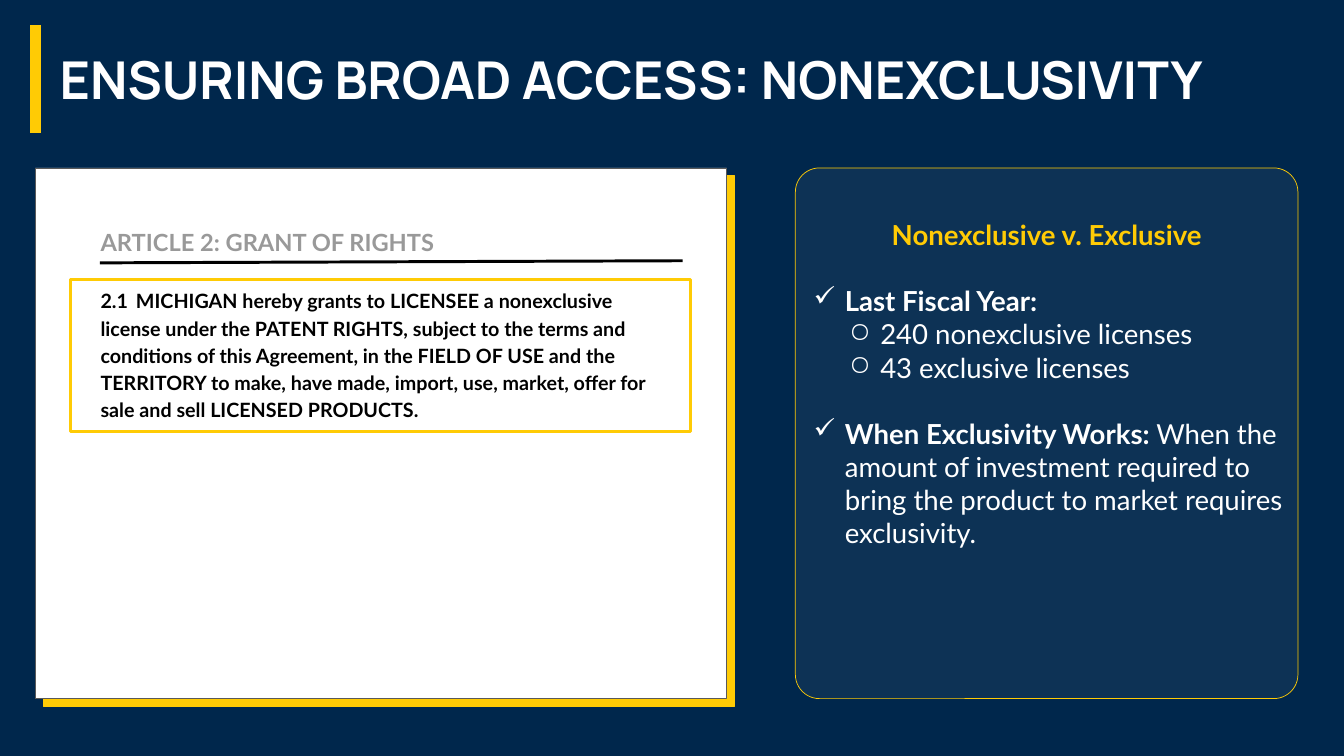
from pptx import Presentation
from pptx.util import Inches, Pt
from pptx.dml.color import RGBColor as RGB
from pptx.enum.shapes import MSO_SHAPE as SHAPE, MSO_CONNECTOR as LINE
from pptx.enum.text import PP_ALIGN as ALIGN, MSO_ANCHOR as ANCHOR
from pptx.oxml.ns import qn
from lxml.etree import SubElement as sub

NAVY, GOLD, WHITE, BLACK = "00274C", "FFCB05", "FFFFFF", "000000"
GREY, EDGE = "999999", "595959"

HEAD = dict(name="Manrope", size=Pt(53), bold=True, color=WHITE)
TERM = dict(name="Lato", size=Pt(28), bold=True, color=GOLD)
BOLD = TERM | dict(color=WHITE)
BODY = BOLD | dict(bold=False)
ARTICLE = TERM | dict(size=Pt(24), color=GREY)
CLAUSE = TERM | dict(size=Pt(20), color=BLACK)

CENTER = dict(alignment=ALIGN.CENTER)
LOOSE = dict(line_spacing=1.15)
GAP = dict(space_before=Pt(33.6))
CHECK, RING = ("✓", 0.5), ("○", 1)

title = [([("ENSURING BROAD ACCESS: NONEXCLUSIVITY", HEAD)], {}, None)]
terms = [
    ([("Nonexclusive v. Exclusive", TERM)], CENTER, None),
    ([("Last Fiscal Year:", BOLD)], GAP, CHECK),
    ([("240 nonexclusive licenses", BODY)], dict(level=1), RING),
    ([("43 exclusive licenses", BODY)], dict(level=1), RING),
    ([("When Exclusivity Works:", BOLD),
      (" When the amount of investment required to bring the product "
       "to market requires exclusivity.", BODY)], GAP, CHECK),
]
grant = [
    ([("ARTICLE 2: GRANT OF RIGHTS", ARTICLE)], LOOSE, None),
    ([("2.1\tMICHIGAN hereby grants to LICENSEE a nonexclusive license under "
       "the PATENT RIGHTS, subject to the terms and conditions of this "
       "Agreement, in the FIELD OF USE and the TERRITORY to make, have made, "
       "import, use, market, offer for sale and sell LICENSED PRODUCTS.",
       CLAUSE)], LOOSE | dict(space_before=Pt(30.4)), None),
]

TOP, TALL = 2.37, 7.49

deck = Presentation()
deck.slide_width, deck.slide_height = Inches(18.96), Inches(10.67)
slide = deck.slides.add_slide(deck.slide_layouts[6])
shapes = slide.shapes


def paint(fill, color):
    fill.solid()
    fill.fore_color.rgb = RGB.from_string(color)


def mark(para, sign, left):
    props = para._p.get_or_add_pPr()
    props.set("marL", str(Inches(left)))
    props.set("indent", str(Inches(-0.44)))
    tint = sub(props, qn("a:buClr"))
    sub(tint, qn("a:srgbClr"), val=WHITE)
    sub(props, qn("a:buChar"), char=sign)


def write(frame, paras, side, top):
    values = dict(word_wrap=True, vertical_anchor=ANCHOR.TOP,
                  margin_left=Inches(side), margin_right=Inches(side),
                  margin_top=Inches(top), margin_bottom=Inches(side))
    for key, value in values.items():
        setattr(frame, key, value)
    for i, (runs, form, bullet) in enumerate(paras):
        para = frame.add_paragraph() if i else frame.paragraphs[0]
        for key, value in (dict(alignment=ALIGN.LEFT) | form).items():
            setattr(para, key, value)
        if bullet:
            mark(para, *bullet)
        for text, style in runs:
            run = para.add_run()
            run.text = text
            for key, value in style.items():
                if key == "color":
                    paint(run.font.fill, value)
                else:
                    setattr(run.font, key, value)


def label(box, paras, side, top):
    write(shapes.add_textbox(*map(Inches, box)).text_frame, paras, side, top)


def panel(kind, box, fill, edge, width):
    shape = shapes.add_shape(kind, *map(Inches, box))
    if fill:
        paint(shape.fill, fill)
    else:
        shape.fill.background()
    paint(shape.line.fill, edge)
    shape.line.width = Pt(width)
    shape.shadow.inherit = False
    return shape


def rule(ends, color, width):
    line = shapes.add_connector(LINE.STRAIGHT, *map(Inches, ends))
    paint(line.line.fill, color)
    line.line.width = Pt(width)
    sub(line._element.spPr, qn("a:effectLst"))


paint(slide.background.fill, NAVY)
label((0.65, 0.53, 17.67, 1.19), title, 0.19, 0.14)
rule((0.5, 0.35, 0.5, 1.88), GOLD, 12)

card = panel(SHAPE.ROUNDED_RECTANGLE, (11.22, TOP, 7.09, TALL), WHITE, GOLD, 0.75)
card.adjustments[0] = 0.048
tint = card._element.spPr.find(qn("a:solidFill"))[0]
sub(tint, qn("a:alpha"), val="5000")
write(card.text_frame, terms, 0.1, 0.61)

page = panel(SHAPE.RECTANGLE, (0.5, TOP, 9.75, TALL), WHITE, EDGE, 0.75)
glow = sub(page._element.spPr.find(qn("a:effectLst")), qn("a:outerShdw"),
           dist=str(Pt(11.2)), dir="2700000", algn="bl", rotWithShape="0")
sub(glow, qn("a:srgbClr"), val=GOLD)

rule((1.41, 3.71, 9.63, 3.68), BLACK, 3)
label((1.32, 3.05, 8.31, 5.81), grant, 0.1, 0.1)
panel(SHAPE.RECTANGLE, (1, 3.94, 8.74, 2.15), None, GOLD, 3)

deck.save("out.pptx")
